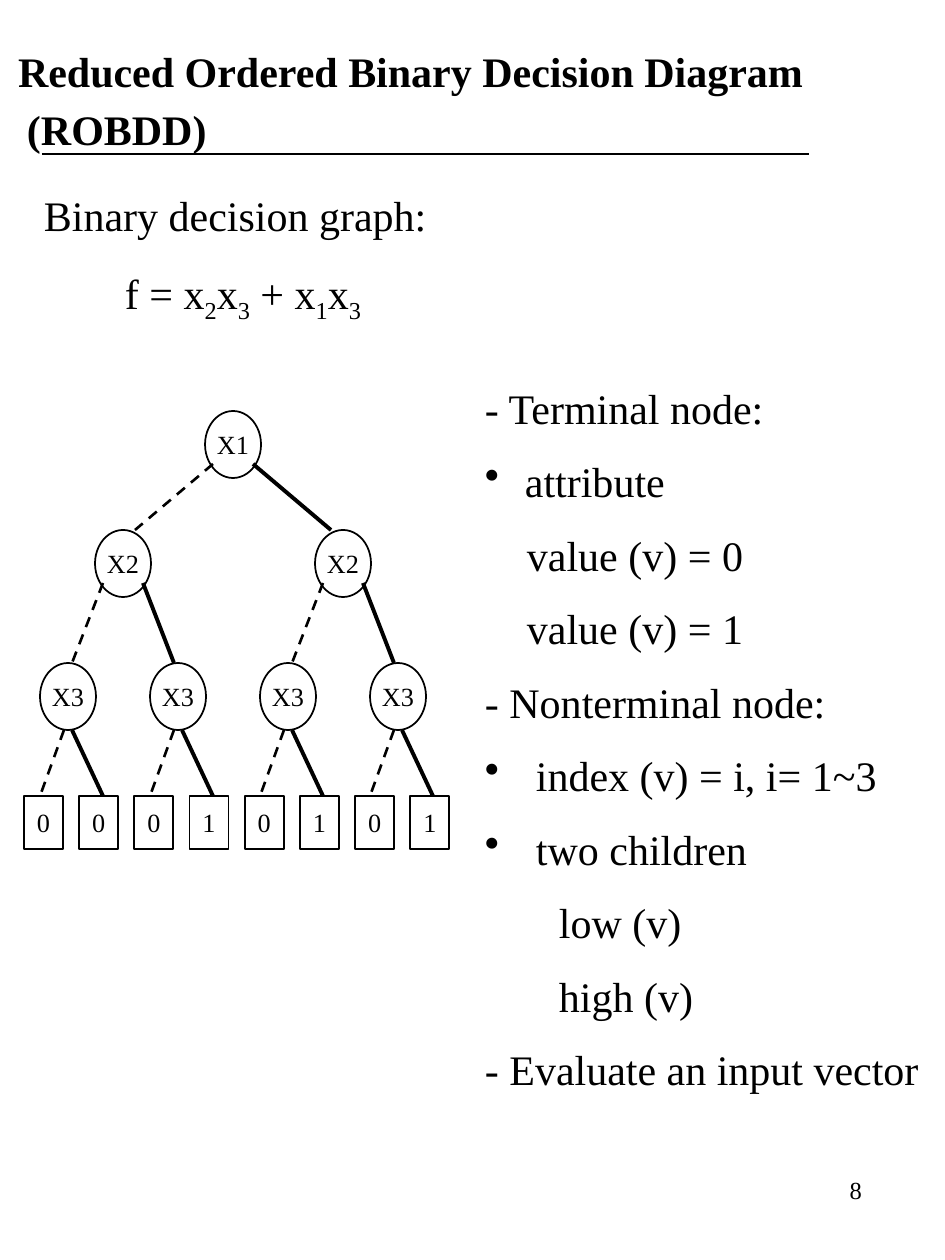
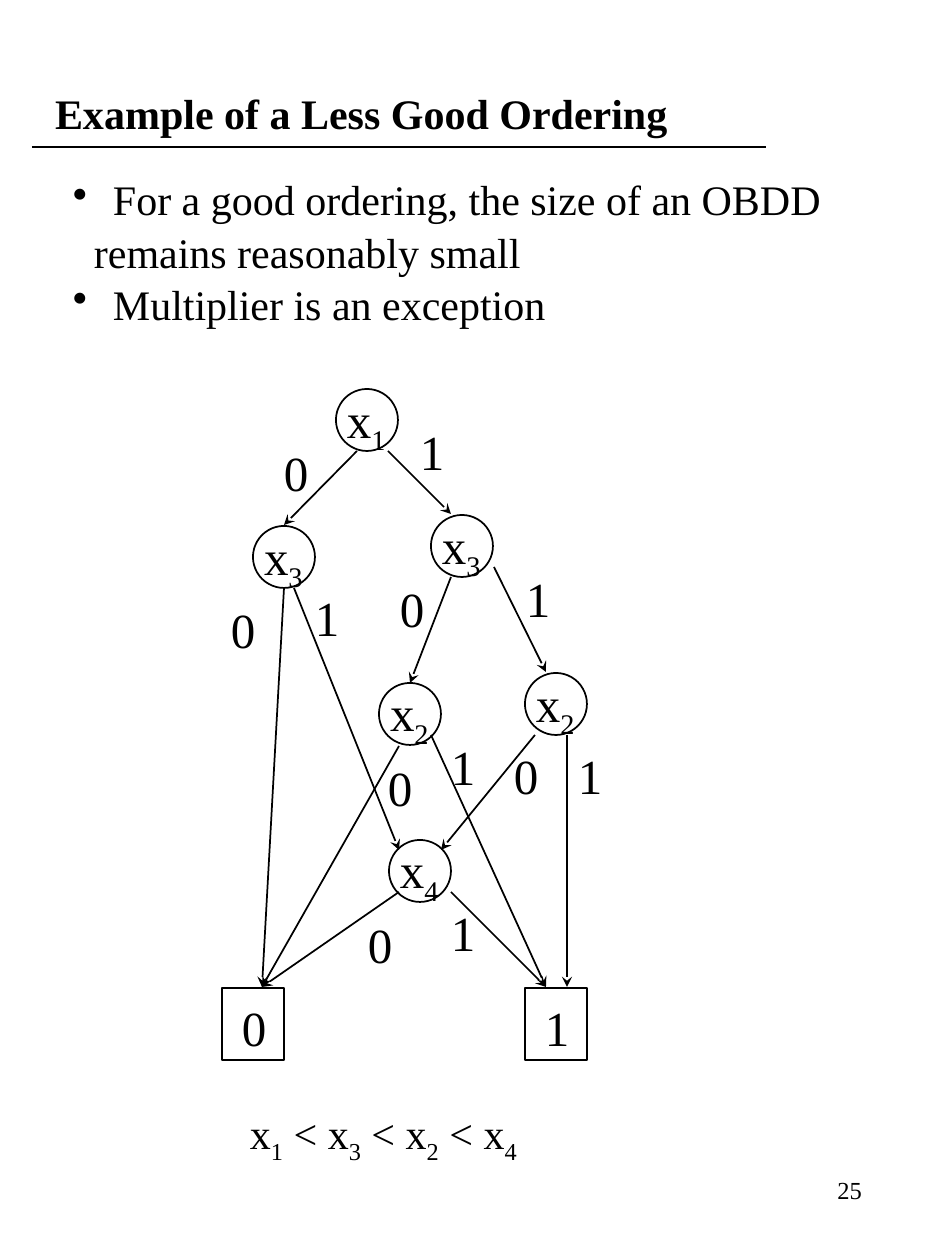
"""Build two slides on binary decision diagrams."""
from lxml.etree import SubElement
from pptx import Presentation
from pptx.dml.color import RGBColor
from pptx.enum.dml import MSO_LINE as Dash
from pptx.enum.shapes import MSO_CONNECTOR as Connector, MSO_SHAPE as Shape
from pptx.enum.text import MSO_ANCHOR as Anchor, MSO_AUTO_SIZE as AutoSize, PP_ALIGN as Align
from pptx.oxml.ns import qn
from pptx.util import Pt

BLACK = RGBColor(0, 0, 0)
WHITE = RGBColor(255, 255, 255)
FONT = "Times New Roman"
PX = 914400 / 126
PAGE = (945, 1260)


def px(length):
    return round(length * PX)


class Deck:
    """Holds the shared style and the slide being filled."""

    def __init__(self):
        self.prs = Presentation()
        self.prs.slide_width, self.prs.slide_height = map(px, PAGE)
        self.slide = None

    def start(self, title, number, box, rule, margin, indent=0, spacing=None):
        self.slide = self.prs.slides.add_slide(self.prs.slide_layouts[5])
        heading = self.slide.shapes.title
        heading.left, heading.top, heading.width, heading.height = map(px, box)
        frame = self.frame(heading, Anchor.MIDDLE)
        paragraph = frame.paragraphs[0]
        self.indent(paragraph, margin, indent)
        paragraph.alignment = Align.LEFT
        paragraph.line_spacing = spacing
        self.add_runs(paragraph, title, 24, bold=True)
        self.edge(*rule)
        self.text((678, 1148, 197, 84), [(number, 0, False)], 14, Align.RIGHT, Anchor.MIDDLE)

    def frame(self, shape, anchor=Anchor.TOP, inset=(13, 6), wrap=True):
        frame = shape.text_frame
        frame.word_wrap = wrap
        frame.auto_size = AutoSize.NONE
        frame.vertical_anchor = anchor
        frame.margin_left = frame.margin_right = px(inset[0])
        frame.margin_top = frame.margin_bottom = px(inset[1])
        return frame

    def indent(self, paragraph, margin, first=0, bullet=False):
        properties = paragraph._p.get_or_add_pPr()
        properties.set("marL", str(px(margin)))
        properties.set("indent", str(px(first)))
        if bullet:
            SubElement(properties, qn("a:buChar")).set("char", "•")

    def add_runs(self, paragraph, text, size, bold=False):
        plain, *rest = text.split("_")
        pieces = [(plain, False)]
        for part in rest:
            pieces += [(part[0], True), (part[1:], False)]
        for piece, lowered in pieces:
            if piece:
                run = paragraph.add_run()
                run.text = piece
                run.font.name, run.font.size, run.font.bold = FONT, Pt(size), bold
                run.font.color.rgb = BLACK
                if lowered:
                    run.font._element.set("baseline", "-25000")

    def text(self, box, lines, size=24, align=Align.LEFT, anchor=Anchor.TOP, gap=0, wrap=True):
        frame = self.frame(self.slide.shapes.add_textbox(*map(px, box)), anchor, wrap=wrap)
        for i, (words, margin, bullet) in enumerate(lines):
            paragraph = frame.add_paragraph() if i else frame.paragraphs[0]
            self.indent(paragraph, margin, -margin if bullet else 0, bullet)
            paragraph.alignment = align
            paragraph.space_before = Pt(gap if i else 0)
            self.add_runs(paragraph, words, size)

    def label(self, words, left, top, width=50):
        self.text((left, top, width, 72), [(words, 0, False)], 28, wrap=False)

    def node(self, kind, box, words="", fill=None):
        shape = self.slide.shapes.add_shape(kind, *map(px, box))
        shape.shadow.inherit = False
        if fill is None:
            shape.fill.background()
        else:
            shape.fill.solid()
            shape.fill.fore_color.rgb = fill
        shape.line.color.rgb, shape.line.width = BLACK, Pt(1)
        if words:
            paragraph = self.frame(shape, Anchor.MIDDLE, (0, 0), False).paragraphs[0]
            paragraph.alignment = Align.CENTER
            self.add_runs(paragraph, words, 15)

    def edge(self, x1, y1, x2, y2, width=1, dash=None, arrow=False):
        line = self.slide.shapes.add_connector(Connector.STRAIGHT, *map(px, (x1, y1, x2, y2)))
        line.line.color.rgb, line.line.width = BLACK, Pt(width)
        if dash:
            line.line.dash_style = dash
        if arrow:
            SubElement(line.line._get_or_add_ln(), qn("a:tailEnd")).set("type", "stealth")
        SubElement(line._element.spPr, qn("a:effectLst"))


def add_decision_tree(deck):
    levels = [
        ("X1", 411, 464, 530, (-20, -98), (20, 98)),
        ("X2", 530, 583, 663, (-20, -51), (20, 51)),
        ("X3", 663, 730, 796, (-4, -28), (4, 35)),
    ]
    for depth, (name, top, start, end, low, high) in enumerate(levels):
        count = 2 ** depth
        for i in range(count):
            center = 233 + (i - (count - 1) / 2) * 440 / count
            deck.node(Shape.OVAL, (center - 28, top, 56, 67), name)
            deck.edge(center + low[0], start, center + low[1], end, 1.5, Dash.DASH)
            deck.edge(center + high[0], start, center + high[1], end, 2.25)
    for i, value in enumerate("00010101"):
        deck.node(Shape.RECTANGLE, (24 + 55.2 * i, 796, 39, 53), value)


def add_robdd_slide(deck):
    deck.start("Reduced Ordered Binary Decision Diagram (ROBDD)", "8",
               (0, 21, 945, 150), (42, 154, 809, 154), 14, -9, Pt(33))
    deck.text((0, 183, 895, 160), [
        ("Binary decision graph:", 31, False),
        ("f = x_2x_3 + x_1x_3", 112, False),
    ], gap=16)
    deck.text((472, 376, 468, 827), [
        ("- Terminal node:", 0, False),
        ("attribute", 40, True),
        ("value (v) = 0", 42, False),
        ("value (v) = 1", 42, False),
        ("- Nonterminal node:", 0, False),
        ("index (v) = i, i= 1~3", 51, True),
        ("two children", 51, True),
        ("low (v)", 74, False),
        ("high (v)", 74, False),
        ("- Evaluate an input vector", 0, False),
    ], gap=13.2)
    add_decision_tree(deck)


def add_ordering_graph(deck):
    variables = [("x_1", 336, 389), ("x_3", 253, 526), ("x_3", 431, 515),
                 ("x_2", 525, 673), ("x_2", 379, 683), ("x_4", 389, 840)]
    terminals = [("0", 222), ("1", 525)]
    edges = [
        (357, 451, 284, 525), (388, 451, 451, 514), (284, 588, 262, 987),
        (294, 588, 399, 850), (451, 577, 410, 683), (494, 567, 546, 672),
        (399, 746, 262, 987), (431, 735, 546, 987), (535, 735, 441, 850),
        (567, 735, 567, 987), (399, 892, 262, 987), (451, 892, 546, 987),
    ]
    branches = [(271, 436), (407, 415), (218, 593), (302, 582), (387, 572), (513, 562),
                (375, 751), (438, 730), (501, 740), (565, 740), (355, 908), (438, 897)]
    for _, left, top in variables:
        deck.node(Shape.OVAL, (left, top, 62, 62), fill=WHITE)
    for _, left in terminals:
        deck.node(Shape.RECTANGLE, (left, 988, 62, 72), fill=WHITE)
    for ends in edges:
        deck.edge(*ends, arrow=True)
    for name, left, top in variables:
        deck.label(name, left - 2, top - 6, 67)
    for value, left in terminals:
        deck.label(value, left + 7, 992)
    for i, (left, top) in enumerate(branches):
        deck.label(str(i % 2), left, top)


def add_ordering_slide(deck):
    deck.start("Example of a Less Good Ordering", "25",
               (0, 8, 804, 210), (32, 147, 766, 147), 42)
    deck.text((60, 168, 842, 164), [
        ("For a good ordering, the size of an OBDD", 40, True),
        ("remains reasonably small", 21, False),
        ("Multiplier is an exception", 40, True),
    ], gap=1)
    add_ordering_graph(deck)
    deck.text((237, 1102, 300, 63), [("x_1 < x_3 < x_2 < x_4", 0, False)])


def main():
    deck = Deck()
    add_robdd_slide(deck)
    add_ordering_slide(deck)
    deck.prs.save("out.pptx")


if __name__ == "__main__":
    main()
